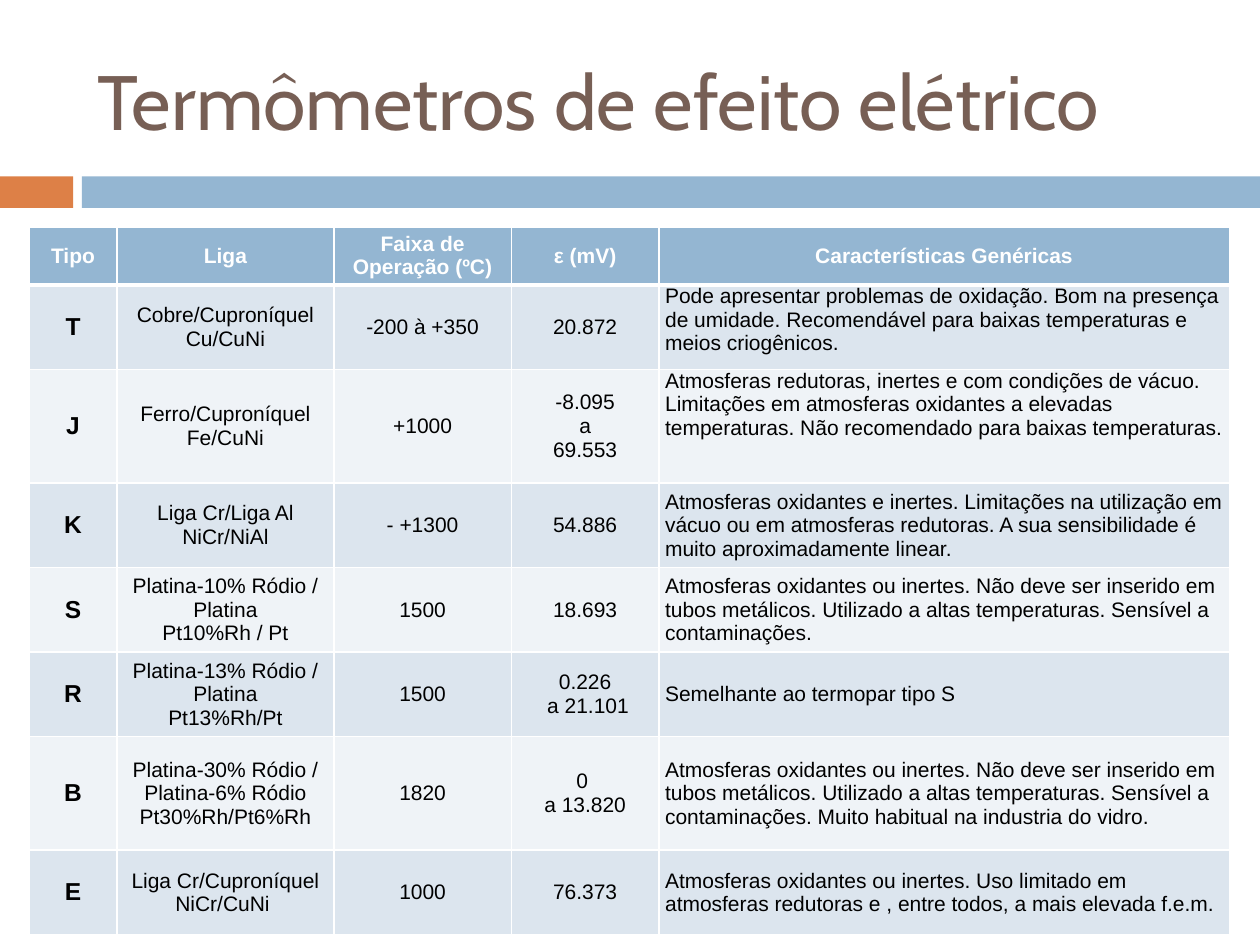
from lxml import etree
from pptx import Presentation
from pptx.dml.color import RGBColor
from pptx.enum.shapes import MSO_SHAPE
from pptx.enum.text import MSO_ANCHOR, MSO_AUTO_SIZE, PP_ALIGN
from pptx.oxml.ns import qn
from pptx.util import Inches, Pt

RECTANGLE = MSO_SHAPE.RECTANGLE
TOP, MIDDLE = MSO_ANCHOR.TOP, MSO_ANCHOR.MIDDLE
LEFT, CENTER = PP_ALIGN.LEFT, PP_ALIGN.CENTER
NO_FIT = MSO_AUTO_SIZE.NONE

BROWN = RGBColor(0x77, 0x5F, 0x55)
ORANGE = RGBColor(0xDD, 0x80, 0x47)
BLUE = RGBColor(0x94, 0xB6, 0xD2)
BAND_DARK = RGBColor(0xDC, 0xE5, 0xEE)
BAND_LIGHT = RGBColor(0xEF, 0xF3, 0xF7)
WHITE = RGBColor(0xFF, 0xFF, 0xFF)
BLACK = RGBColor(0, 0, 0)

PAGE_WIDTH, PAGE_HEIGHT = 10, 7.5
TITLE_BOX = (0.67, 0.25, 8.92, 1.08)
STRIPE_BOX = (0, 1.4, PAGE_WIDTH, 0.25)
TABLE_BOX = (0.23, 1.8, 9.53, 5.62)

# Relative column widths and row heights
COLUMNS = [0.7, 1.72, 1.41, 1.17, 4.53]
ROWS = [0.46, 0.67, 0.9, 0.67, 0.67, 0.67, 0.9, 0.67]
TOP_ANCHORED_TYPES = ("T", "J")

# Each line break inside a cell starts a new paragraph
HEADER = ["Tipo", "Liga", "Faixa de Operação (ºC)", "ε (mV)",
          "Características Genéricas"]
THERMOCOUPLES = [
    ["T", "Cobre/Cuproníquel\nCu/CuNi", "-200 à +350", "20.872",
     "Pode apresentar problemas de oxidação. Bom na presença de umidade. "
     "Recomendável para baixas temperaturas e meios criogênicos."],
    ["J", "Ferro/Cuproníquel\nFe/CuNi", "+1000", "-8.095\na\n69.553",
     "Atmosferas redutoras, inertes e com condições de vácuo. "
     "Limitações em atmosferas oxidantes a elevadas temperaturas. "
     "Não recomendado para baixas temperaturas."],
    ["K", "Liga Cr/Liga Al\nNiCr/NiAl", "- +1300", "54.886",
     "Atmosferas oxidantes e inertes. Limitações na utilização em vácuo "
     "ou em atmosferas redutoras. A sua sensibilidade é muito "
     "aproximadamente linear."],
    ["S", "Platina-10% Ródio / Platina\nPt10%Rh / Pt", "1500", "18.693",
     "Atmosferas oxidantes ou inertes. Não deve ser inserido em tubos "
     "metálicos. Utilizado a altas temperaturas. Sensível a contaminações."],
    ["R", "Platina-13% Ródio / Platina\nPt13%Rh/Pt", "1500",
     "0.226\n a 21.101", "Semelhante ao termopar tipo S"],
    ["B", "Platina-30% Ródio / Platina-6% Ródio Pt30%Rh/Pt6%Rh", "1820",
     "0 \na 13.820",
     "Atmosferas oxidantes ou inertes. Não deve ser inserido em tubos "
     "metálicos. Utilizado a altas temperaturas. Sensível a contaminações. "
     "Muito habitual na industria do vidro."],
    ["E", "Liga Cr/Cuproníquel\nNiCr/CuNi ", "1000", "76.373",
     "Atmosferas oxidantes ou inertes. Uso limitado em atmosferas redutoras "
     "e , entre todos, a mais elevada f.e.m."],
]


def write_text(frame, text, font_name, size, color, align, bold=False):
    for index, line in enumerate(text.split("\n")):
        para = frame.add_paragraph() if index else frame.paragraphs[0]
        para.alignment = align
        span = para.add_run()
        span.text = line
        span.font.name = font_name
        span.font.size = Pt(size)
        span.font.bold = bold
        span.font.color.rgb = color


def add_title(page, box):
    title = page.shapes.title
    title.left, title.top, title.width, title.height = map(Inches, box)
    frame = title.text_frame
    frame.word_wrap = True
    frame.auto_size = NO_FIT
    frame.vertical_anchor = MIDDLE
    write_text(frame, "Termômetros de efeito elétrico", "Cabin", 44, BROWN, LEFT)


def add_stripe(page, box):
    """Short orange block and long blue bar, with a narrow gap between."""
    left, top, width, height = box
    for start, end, color in ((0, 0.058, ORANGE), (0.065, 1, BLUE)):
        bar = page.shapes.add_shape(
            RECTANGLE, Inches(left + start * width), Inches(top),
            Inches((end - start) * width), Inches(height))
        bar.shadow.inherit = False
        bar.fill.solid()
        bar.fill.fore_color.rgb = color
        bar.line.fill.background()


def set_borders(cell, top_width, bottom_width):
    properties = cell._tc.get_or_add_tcPr()
    sides = (("a:lnL", 1), ("a:lnR", 1), ("a:lnT", top_width), ("a:lnB", bottom_width))
    for index, (side, width) in enumerate(sides):
        line = etree.Element(qn(side), w=str(Pt(width)))
        fill = etree.SubElement(line, qn("a:solidFill"))
        etree.SubElement(fill, qn("a:srgbClr"), val=str(WHITE))
        properties.insert(index, line)


def format_cell(cell, text, row, column, kind):
    is_header = row == 0
    is_description = column == len(COLUMNS) - 1
    cell.margin_left = cell.margin_right = Inches(0.05)
    cell.margin_top = cell.margin_bottom = 0
    cell.vertical_anchor = TOP if is_description and kind in TOP_ANCHORED_TYPES else MIDDLE
    cell.fill.solid()
    cell.fill.fore_color.rgb = BLUE if is_header else (BAND_LIGHT, BAND_DARK)[row % 2]
    set_borders(cell, 3 if row == 1 else 1, 3 if is_header else 1)
    write_text(cell.text_frame, text, "Arial",
               14 if column == 0 and not is_header else 12,
               WHITE if is_header else BLACK,
               LEFT if is_description and not is_header else CENTER,
               bold=is_header or column == 0)


def add_thermocouple_table(page, box):
    width, height = box[2:]
    table = page.shapes.add_table(len(ROWS), len(COLUMNS), *map(Inches, box)).table
    for column, share in zip(table.columns, COLUMNS):
        column.width = Inches(width * share / sum(COLUMNS))
    for row, share in zip(table.rows, ROWS):
        row.height = Inches(height * share / sum(ROWS))
    for row, texts in enumerate([HEADER] + THERMOCOUPLES):
        for column, text in enumerate(texts):
            format_cell(table.cell(row, column), text, row, column, texts[0])


def main():
    deck = Presentation()
    deck.slide_width, deck.slide_height = Inches(PAGE_WIDTH), Inches(PAGE_HEIGHT)
    page = deck.slides.add_slide(deck.slide_layouts.get_by_name("Title Only"))
    add_stripe(page, STRIPE_BOX)
    add_title(page, TITLE_BOX)
    add_thermocouple_table(page, TABLE_BOX)
    deck.save("out.pptx")


if __name__ == "__main__":
    main()
